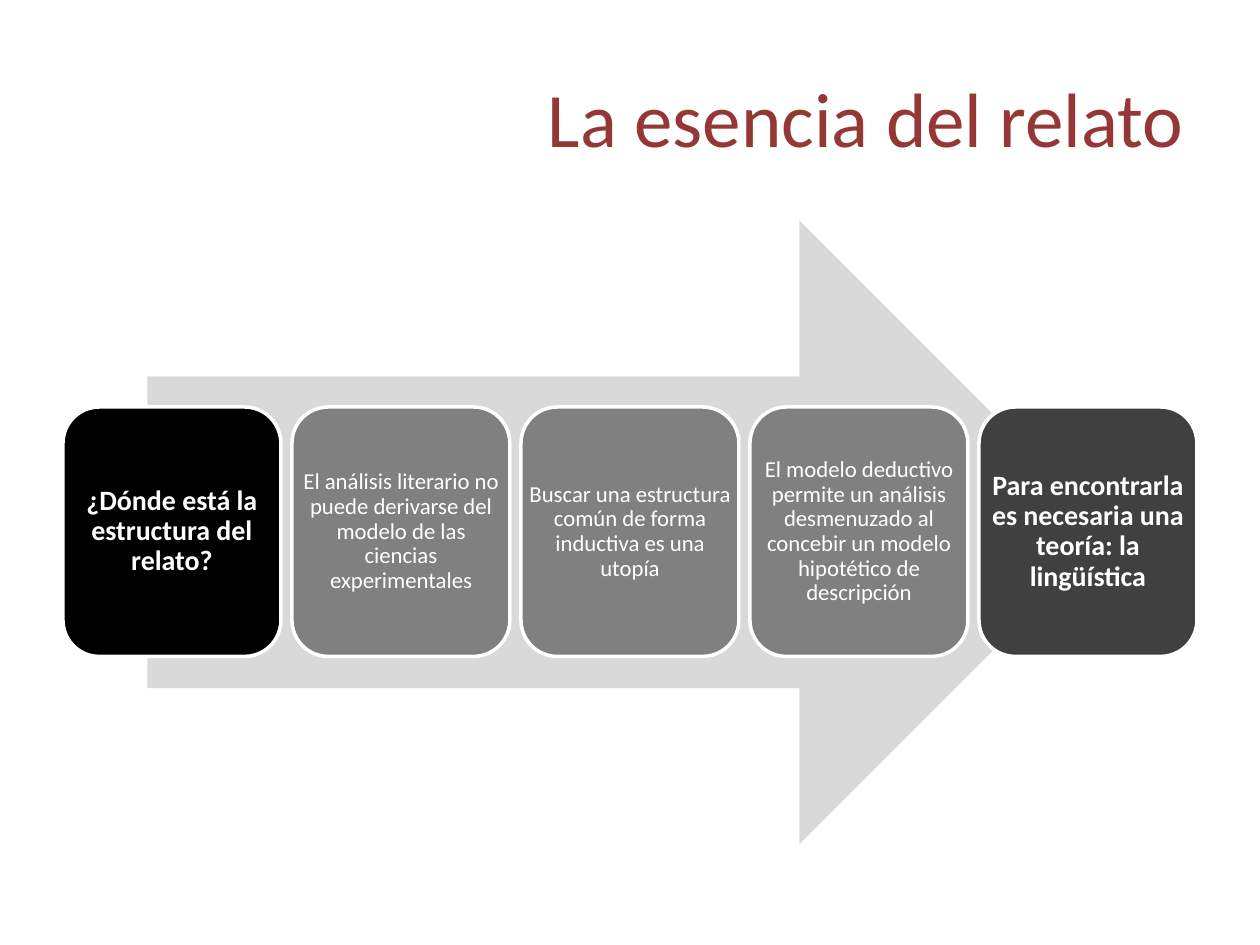
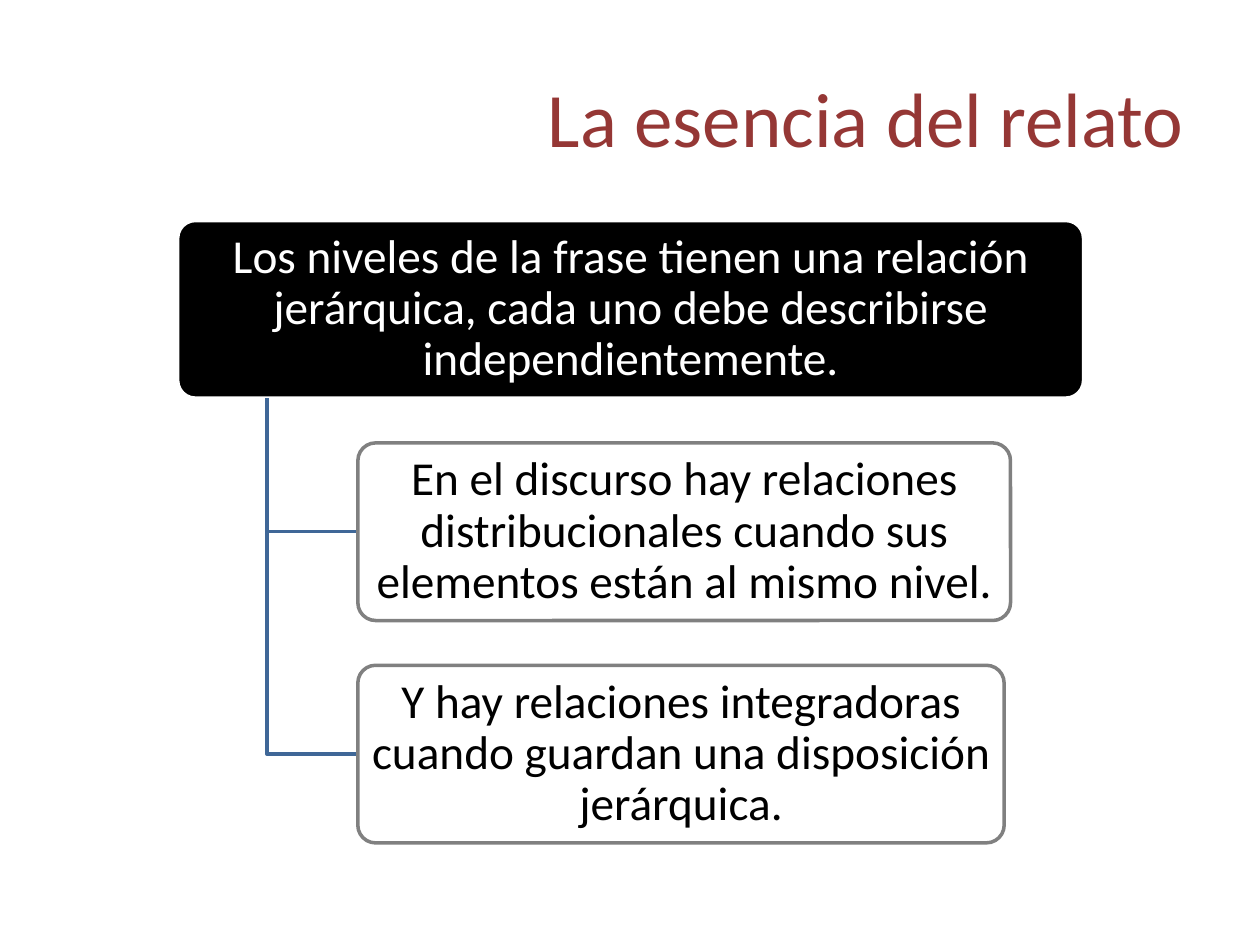
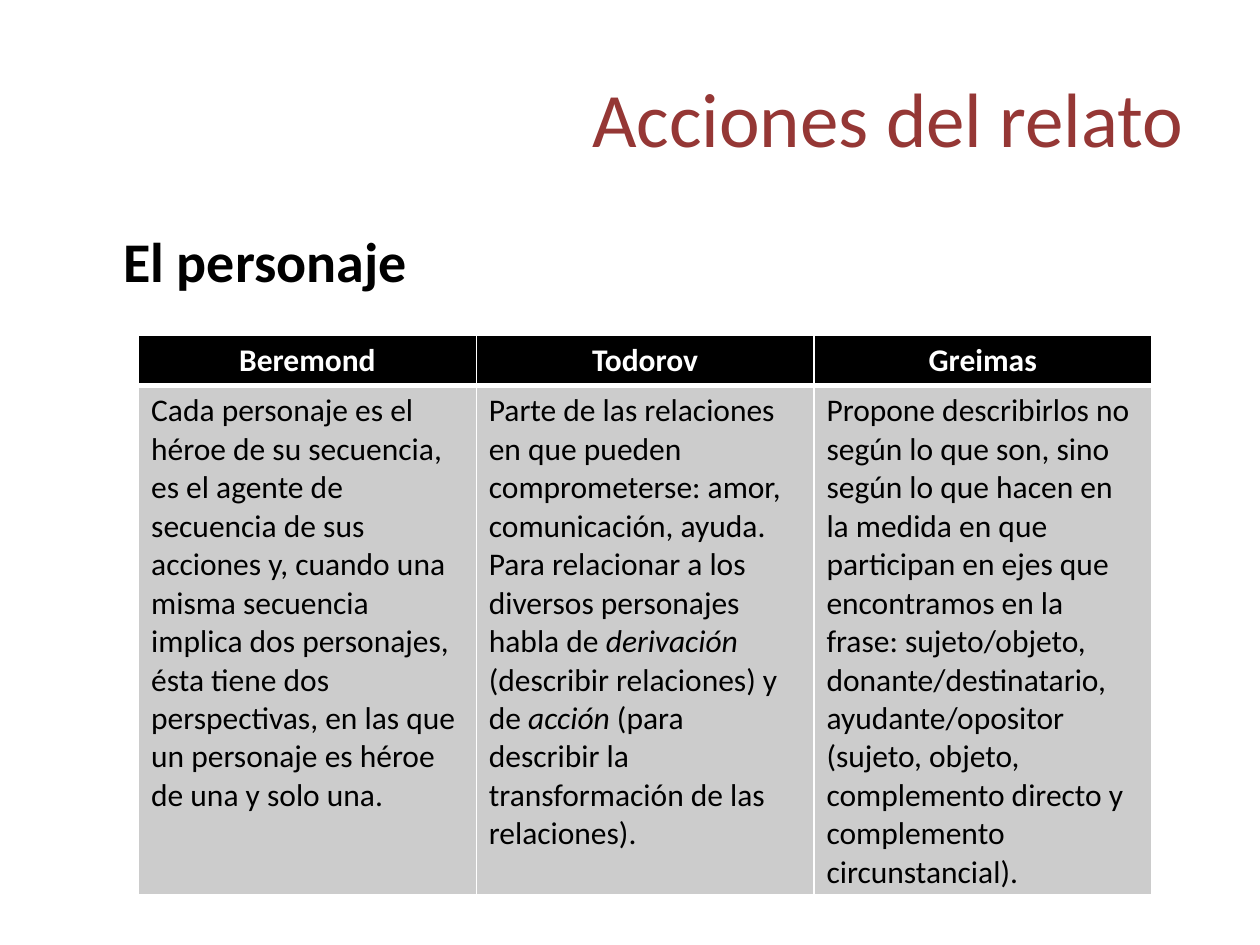
from lxml.etree import SubElement as Sub
from pptx import Presentation
from pptx.dml.color import RGBColor
from pptx.enum.shapes import MSO_SHAPE as Shape
from pptx.enum.text import MSO_ANCHOR as Anchor, PP_ALIGN as Align
from pptx.oxml import parse_xml
from pptx.oxml.ns import nsdecls, qn
from pptx.util import Inches, Pt

# Shared style
FONT = "Calibri"
RED, BLACK, WHITE = "953735", "000000", "FFFFFF"
GREY, DARK, PALE, CELL, BLUE = "808080", "404040", "D9D9D9", "CCCCCC", "3F6797"

# Content
ESSENCE = "La esencia del relato"
ACTIONS = "Acciones del relato"
STEPS = [  # text, fill, size, bold, inset
    ("¿Dónde está la estructura del relato?", BLACK, 16, True, 0.07),
    ("El análisis literario no puede derivarse del modelo de las ciencias "
     "experimentales", GREY, 13, False, 0.05),
    ("Buscar una estructura común de forma inductiva es una utopía",
     GREY, 13, False, 0.05),
    ("El modelo deductivo permite un análisis desmenuzado al concebir un "
     "modelo hipotético de descripción", GREY, 13, False, 0.05),
    ("Para encontrarla es necesaria una teoría: la lingüística",
     DARK, 16, True, 0.07),
]
ROOT = ("Los niveles de la frase tienen una relación jerárquica, cada uno "
        "debe describirse independientemente.")
LEAVES = [  # text, width
    ("En el discurso hay relaciones distribucionales cuando sus elementos "
     "están al mismo nivel.", 5.18),
    ("Y hay relaciones integradoras cuando guardan una disposición "
     "jerárquica.", 5.13),
]
TOPIC = "El personaje"
AUTHORS = [  # name, runs of text; every second run is italic
    ("Beremond", [
        "Cada personaje es el héroe de su secuencia, es el agente de "
        "secuencia de sus acciones y, cuando una misma secuencia implica dos "
        "personajes, ésta tiene dos perspectivas, en las que un personaje es "
        "héroe de una y solo una."]),
    ("Todorov", [
        "Parte de las relaciones en que pueden comprometerse: amor, "
        "comunicación, ayuda. Para relacionar a los diversos personajes "
        "habla de ", "derivación ", "(describir relaciones) y de ", "acción",
        " (para describir la transformación de las relaciones)."]),
    ("Greimas", [
        "Propone describirlos no según lo que son, sino según lo que hacen "
        "en la medida en que participan en ejes que encontramos en la frase: "
        "sujeto/objeto, donante/destinatario, ayudante/opositor (sujeto, "
        "objeto, complemento directo y complemento circunstancial)."]),
]


def rgb(code):
    return RGBColor.from_string(code)


def box(*rect):
    return [Inches(n) for n in rect]


def style(run, size, color, bold=False, italic=False):
    font = run.font
    font.name, font.size, font.color.rgb = FONT, Pt(size), rgb(color)
    font.bold, font.italic = bold, italic


def paint(shape, fill=None, line=None):
    shape.shadow.inherit = False
    if fill:
        shape.fill.solid()
        shape.fill.fore_color.rgb = rgb(fill)
    else:
        shape.fill.background()
    if line:
        shape.line.color.rgb = rgb(line)
        shape.line.width = Pt(2)
    else:
        shape.line.fill.background()


def label(slide, rect, text, size, color, bold=False, pad=(0.1, 0.05)):
    frame = slide.shapes.add_textbox(*box(*rect)).text_frame
    frame.word_wrap = True
    frame.margin_left = frame.margin_right = Inches(pad[0])
    frame.margin_top = frame.margin_bottom = Inches(pad[1])
    frame.text = text
    style(frame.paragraphs[0].runs[0], size, color, bold)
    return frame


def card(slide, rect, text, size, fill, line, color, pad, bold=False,
         curve=None):
    """Rounded box whose text may use its full width."""
    shape = slide.shapes.add_shape(Shape.ROUNDED_RECTANGLE, *box(*rect))
    if curve:
        shape.adjustments[0] = curve
    paint(shape, fill, line)
    frame = label(slide, rect, text, size, color, bold, pad)
    frame.vertical_anchor = Anchor.MIDDLE
    para = frame.paragraphs[0]
    para.alignment, para.line_spacing = Align.CENTER, 0.9


def start(deck, text):
    slide = deck.slides.add_slide(deck.slide_layouts[5])
    title = slide.shapes.title
    title.left, title.top, title.width, title.height = box(0.5, 0.3, 9, 1.25)
    frame = title.text_frame
    frame.text = text
    frame.vertical_anchor = Anchor.MIDDLE
    frame.paragraphs[0].alignment = Align.RIGHT
    style(frame.paragraphs[0].runs[0], 44, RED)
    return slide


def edge(cell, widths):
    """White cell borders; widths in points for left, right, top, bottom."""
    props = cell._tc.get_or_add_tcPr()
    for i, (side, wide) in enumerate(zip("LRTB", widths)):
        line = parse_xml(f'<a:ln{side} {nsdecls("a")} w="{Pt(wide)}"/>')
        Sub(Sub(line, qn("a:solidFill")), qn("a:srgbClr"), val=WHITE)
        props.insert(i, line)


def flow(deck):
    slide = start(deck, ESSENCE)
    arrow = slide.shapes.add_shape(Shape.RIGHT_ARROW,
                                   *box(1.17, 1.75, 7.65, 4.95))
    paint(arrow, PALE)
    wide, left, right = 1.73, 0.5, 9.5
    pitch = (right - left - wide) / (len(STEPS) - 1)
    for i, (text, fill, size, bold, pad) in enumerate(STEPS):
        card(slide, (left + i * pitch, 3.23, wide, 1.98), text, size, fill,
             WHITE, WHITE, (pad, pad), bold)


def tree(deck):
    slide = start(deck, ESSENCE)
    top, high, pitch, stem, left = 1.75, 1.41, 1.765, 2.12, 2.84
    pad = (0.06, 0.04)
    card(slide, (1.41, top, 7.19, high), ROOT, 27, BLACK, WHITE, WHITE, pad,
         curve=0.1)
    for i, (text, wide) in enumerate(LEAVES, 1):
        y = top + i * pitch
        mid = y + high / 2
        pen = slide.shapes.build_freeform(*box(stem, top + high))
        pen.add_line_segments([box(stem, mid), box(left, mid)], close=False)
        paint(pen.convert_to_shape(), line=BLUE)
        card(slide, (left, y, wide, high), text, 27, WHITE, GREY, BLACK, pad,
             curve=0.1)


def grid(deck):
    slide = start(deck, ACTIONS)
    label(slide, (0.88, 1.75, 8.62, 0.7), TOPIC, 32, BLACK, True)
    table = slide.shapes.add_table(2, len(AUTHORS),
                                   *box(1.1, 2.66, 8.04, 4.44)).table
    table.rows[0].height, table.rows[1].height = box(0.4, 4.04)
    for col, (name, parts) in enumerate(AUTHORS):
        head, body = table.cell(0, col), table.cell(1, col)
        for cell, fill, widths in ((head, BLACK, (1, 1, 1, 3)),
                                   (body, CELL, (1, 1, 3, 1))):
            cell.fill.solid()
            cell.fill.fore_color.rgb = rgb(fill)
            edge(cell, widths)
        head.text_frame.text = name
        para = head.text_frame.paragraphs[0]
        para.alignment = Align.CENTER
        style(para.runs[0], 18, WHITE, True)
        for i, part in enumerate(parts):
            run = body.text_frame.paragraphs[0].add_run()
            run.text = part
            style(run, 18, BLACK, italic=i % 2 == 1)


def main():
    deck = Presentation()
    deck.slide_width, deck.slide_height = box(10, 7.5)
    for build in (flow, tree, grid):
        build(deck)
    deck.save("out.pptx")


if __name__ == "__main__":
    main()
